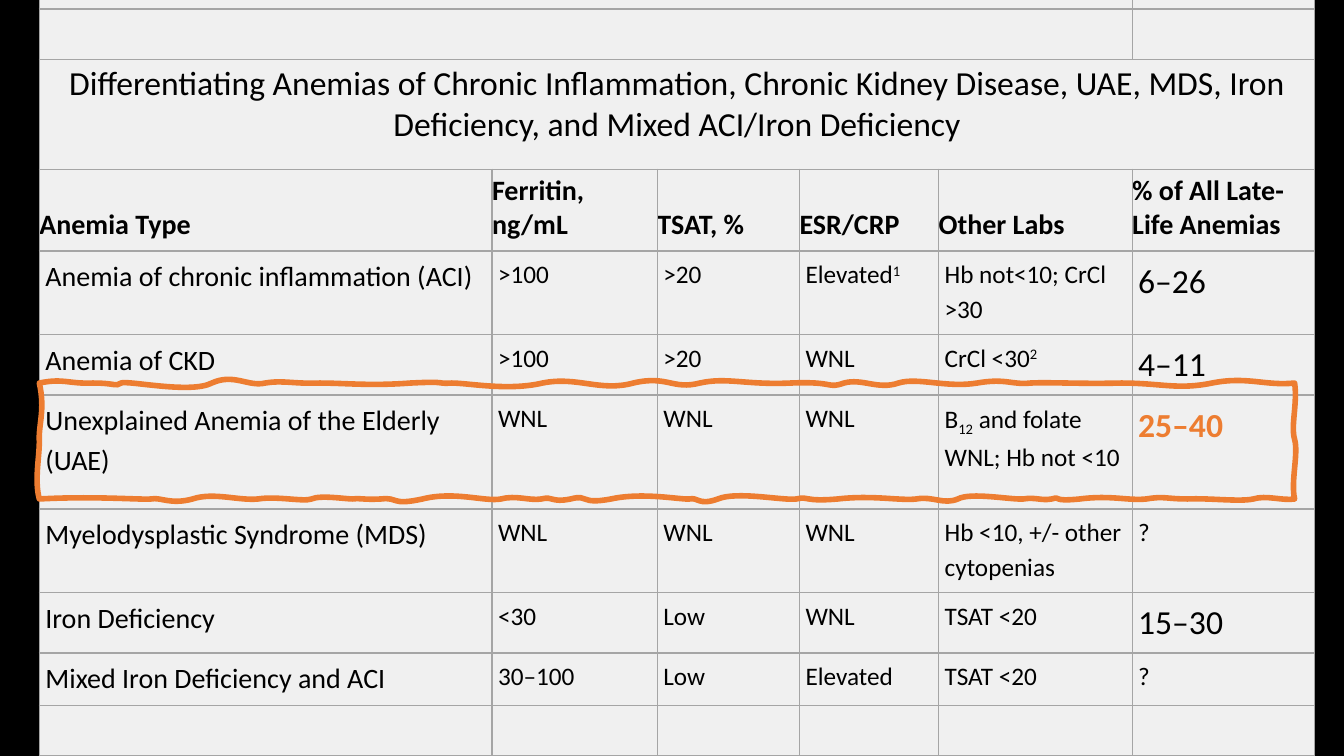
from lxml.etree import SubElement
from pptx import Presentation
from pptx.dml.color import RGBColor
from pptx.enum.text import MSO_ANCHOR, PP_ALIGN
from pptx.oxml.ns import qn
from pptx.util import Pt

PX = 9144  # 100 px to the inch
FONT = "Calibri"
BLACK = RGBColor(0x00, 0x00, 0x00)
PALE = RGBColor(0xF0, 0xF0, 0xF0)
GRAY = RGBColor(0xA5, 0xA5, 0xA5)
ORANGE = RGBColor(0xED, 0x7D, 0x31)

COLS = [449, 164, 141, 138, 192, 181]
ROWS = [50, 50, 109, 81, 81, 50, 113, 81, 50, 50, 50]
SIZES = [20, 18, 18, 18, 18, 24]
TITLE = ("Differentiating Anemias of Chronic Inflammation, Chronic Kidney "
         "Disease, UAE, MDS, Iron Deficiency, and Mixed ACI/Iron Deficiency")
HEADS = ["Anemia Type", "Ferritin, ng/mL", "TSAT, %", "ESR/CRP",
         "Other Labs", "% of All Late-Life Anemias"]
# A cell with raised or lowered text is a list of (text, baseline) runs
TYPES = [
    ["Anemia of chronic inflammation (ACI)", ">100", ">20",
     [("Elevated", 0), ("1", 30)], "Hb not<10; CrCl >30", "6–26"],
    ["Anemia of CKD", ">100", ">20", "WNL",
     [("CrCl <30", 0), ("2", 30)], "4–11"],
    ["Unexplained Anemia of the Elderly (UAE)", "WNL", "WNL", "WNL",
     [("B", 0), ("12", -25), (" and folate WNL; Hb not <10", 0)], "25–40"],
    ["Myelodysplastic Syndrome (MDS)", "WNL", "WNL", "WNL",
     "Hb <10, +/- other cytopenias", "?"],
    ["Iron Deficiency", "<30", "Low", "WNL", "TSAT <20", "15–30"],
    ["Mixed Iron Deficiency and ACI", "30–100", "Low", "Elevated",
     "TSAT <20", "?"],
]
KEY = "25–40"

# Sketched frame: each wave is (control x, y, control x, y, end x)
LEFT, TOP, RIGHT, BASE = 39, 380, 1284, 495
UPPER = [
    (63, 375, 68, 381, 92), (116, 380, 114, 384, 120),
    (126, 377, 189, 391, 210), (232, 370, 246, 384, 263),
    (281, 377, 291, 381, 317), (342, 380, 367, 383, 407),
    (447, 378, 430, 381, 448), (465, 380, 504, 388, 538),
    (573, 373, 595, 389, 628), (662, 372, 667, 387, 694),
    (721, 374, 739, 382, 784), (829, 378, 820, 386, 837),
    (855, 375, 871, 387, 891), (910, 374, 939, 385, 969),
    (998, 375, 1003, 382, 1022), (1040, 379, 1072, 381, 1112),
    (1152, 380, 1168, 387, 1202), (1237, 373, 1255, 383, RIGHT),
]
LOWER = [
    (1272, 497, 1256, 491, 1243), (1230, 498, 1199, 494, 1178),
    (1156, 495, 1155, 492, 1137), (1119, 497, 1102, 491, 1071),
    (1041, 498, 1054, 492, 1043), (1033, 497, 1027, 493, 1015),
    (1003, 496, 963, 488, 950), (936, 501, 925, 492, 909),
    (893, 497, 866, 491, 831), (796, 498, 803, 492, 790),
    (778, 497, 731, 487, 712), (693, 502, 692, 493, 684),
    (676, 496, 638, 488, 606), (574, 501, 585, 490, 566),
    (546, 499, 549, 492, 537), (525, 497, 512, 491, 497),
    (481, 498, 451, 487, 419), (387, 502, 396, 493, 378),
    (360, 496, 358, 494, 350), (342, 495, 318, 491, 309),
    (301, 498, 275, 492, 256), (237, 497, 212, 488, 191),
    (169, 501, 159, 493, 150), (141, 496, 94, 492, LEFT),
]
WAVES = (
    [(*wave, TOP) for wave in UPPER]
    + [(1287, 401, 1280, 422, RIGHT, 436), (1288, 450, 1280, 478, RIGHT, BASE)]
    + [(*wave, BASE) for wave in LOWER]
    + [(34, 477, 39, 454, LEFT, 438), (38, 421, 45, 407, LEFT, TOP)]
)


def format(item, **values):
    for name, value in values.items():
        setattr(item, name, value)


def style(cell):
    """Give a cell its borders, fill and insets."""
    props = cell._tc.get_or_add_tcPr()
    for side in ("lnL", "lnR", "lnT", "lnB"):
        line = SubElement(props, qn("a:" + side), w=str(Pt(1)))
        fill = SubElement(line, qn("a:solidFill"))
        SubElement(fill, qn("a:srgbClr"), val=str(GRAY))
    cell.fill.solid()
    cell.fill.fore_color.rgb = PALE
    format(cell, margin_left=0, margin_right=0,
           margin_top=4 * PX, margin_bottom=9 * PX)


def write(cell, text, size, color=BLACK, bold=False, **layout):
    """Fill a cell with one paragraph of runs."""
    para = cell.text_frame.paragraphs[0]
    format(para, **layout)
    for part, shift in [(text, 0)] if isinstance(text, str) else text:
        run = para.add_run()
        run.text = part
        format(run.font, name=FONT, size=Pt(size), bold=bold)
        run.font.color.rgb = color
        if shift:
            run._r.get_or_add_rPr().set("baseline", str(shift * 1000))
    return para


def add_grid(slide):
    """Lay out the empty table with its merged cells."""
    frame = slide.shapes.add_table(
        len(ROWS), len(COLS), LEFT * PX, -41 * PX,
        sum(COLS) * PX, sum(ROWS) * PX)
    grid = frame.table
    format(grid, first_row=False, horz_banding=False)
    for col, width in zip(grid.columns, COLS):
        col.width = width * PX
    for row, height in zip(grid.rows, ROWS):
        row.height = height * PX
    for cell in grid.iter_cells():
        style(cell)
    for row, last in enumerate((4, 4, 5)):
        grid.cell(row, 0).merge(grid.cell(row, last))
    return grid


def fill_grid(grid):
    # Title and column heads
    write(grid.cell(2, 0), TITLE, 24, alignment=PP_ALIGN.CENTER,
          space_before=Pt(10), space_after=Pt(8))
    for col, head in enumerate(HEADS):
        cell = grid.cell(3, col)
        cell.vertical_anchor = MSO_ANCHOR.BOTTOM
        write(cell, head, 20, bold=True, space_before=Pt(2))
    # Anemia types
    for row, kind in enumerate(TYPES, 4):
        for col, text in enumerate(kind):
            key = text == KEY
            para = write(grid.cell(row, col), text,
                         18 if text == "?" else SIZES[col],
                         ORANGE if key else BLACK, key, line_spacing=1.15)
            para._p.get_or_add_pPr().set("marL", str(6 * PX))


def add_sketch(slide):
    """Draw the wavy frame: straight sides first, then bent into curves."""
    pen = slide.shapes.build_freeform(LEFT, TOP, scale=PX)
    pen.add_line_segments([wave[4:] for wave in WAVES], close=True)
    frame = pen.convert_to_shape()
    frame.shadow.inherit = False
    frame.fill.background()
    frame.line.color.rgb = ORANGE
    frame.line.width = Pt(4)
    sides = list(frame._element.iter(qn("a:lnTo")))
    for side, wave in zip(sides, WAVES):
        side.tag = qn("a:cubicBezTo")
        for point in list(side):
            side.remove(point)
        for x, y in zip(wave[::2], wave[1::2]):
            SubElement(side, qn("a:pt"), x=str(x - LEFT), y=str(y - TOP))


def main():
    deck = Presentation()
    format(deck, slide_width=1333 * PX, slide_height=750 * PX)
    slide = deck.slides.add_slide(deck.slide_layouts[6])
    back = slide.background.fill
    back.solid()
    back.fore_color.rgb = BLACK
    fill_grid(add_grid(slide))
    add_sketch(slide)
    deck.save("out.pptx")


if __name__ == "__main__":
    main()
